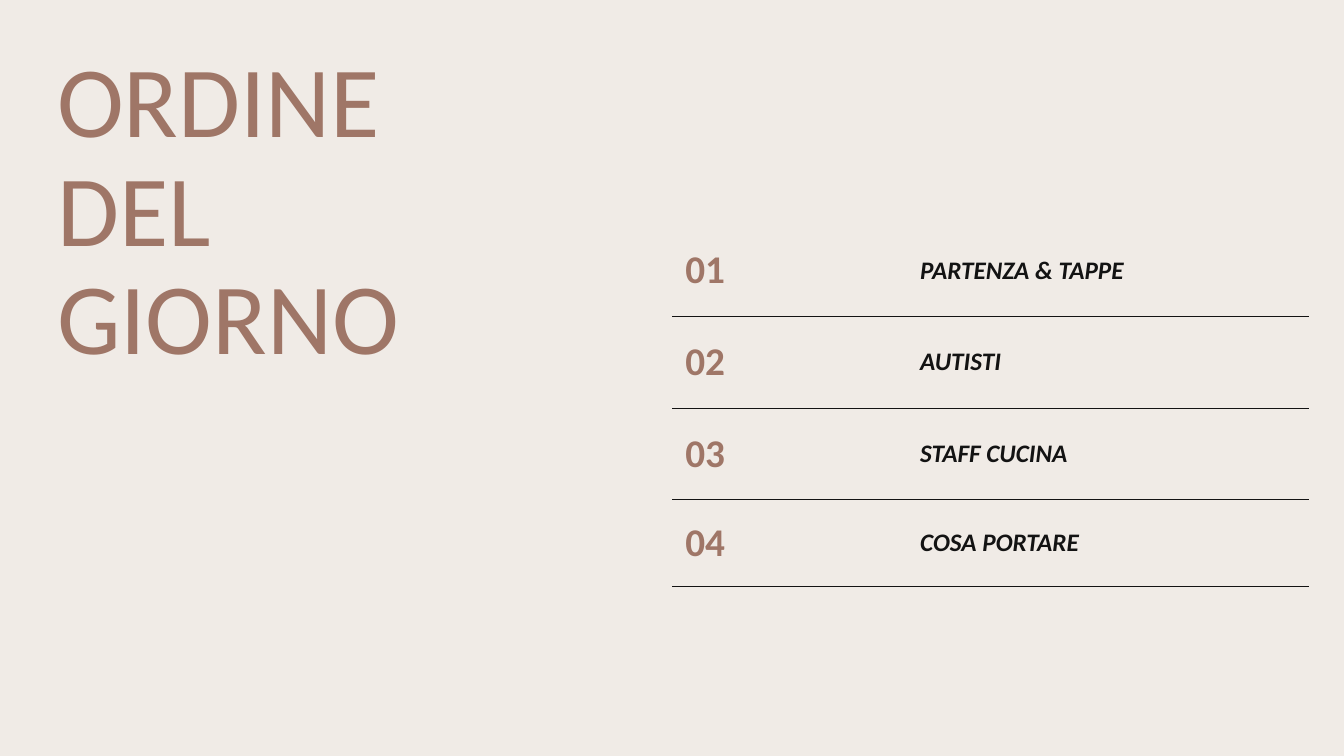
from pptx import Presentation
from pptx.dml.color import RGBColor
from pptx.enum.text import MSO_ANCHOR as Anchor
from pptx.oxml import parse_xml
from pptx.oxml.ns import nsdecls
from pptx.util import Cm, Pt

SAND = RGBColor(0xF0, 0xEB, 0xE6)
CLAY = RGBColor(0x9F, 0x76, 0x67)
INK = RGBColor(0x13, 0x13, 0x13)
FONT = "Calibri"
NO_STYLE = "{2D5ABB26-0587-4C30-8999-92F81FD0307C}"

TITLE_LINES = ["ORDINE", "DEL", "GIORNO"]
AGENDA = ["PARTENZA & TAPPE", "AUTISTI", "STAFF CUCINA", "COSA PORTARE"]
ROW_HEIGHTS = [2.31, 2.31, 2.31, 2.19]
COLUMN_WIDTHS = [5.92, 10.13]


def add_span(para, text, size, color, bold=False, italic=False):
    span = para.add_run()
    span.text = text
    font = span.font
    font.name, font.size, font.bold, font.italic = FONT, Pt(size), bold, italic
    font.color.rgb = color


def rule_below(cell):
    """Draw a thin line along the bottom edge of a table cell."""
    line = parse_xml(
        f'<a:lnB {nsdecls("a")} w="{Pt(0.5)}"><a:solidFill>'
        f'<a:srgbClr val="{INK}"/></a:solidFill></a:lnB>'
    )
    cell._tc.get_or_add_tcPr().insert(0, line)


deck = Presentation()
deck.slide_width, deck.slide_height = Cm(33.87), Cm(19.05)
page = deck.slides.add_slide(deck.slide_layouts[6])
page.background.fill.solid()
page.background.fill.fore_color.rgb = SAND

# Title
title_box = page.shapes.add_textbox(Cm(1.19), Cm(1.14), Cm(30.68), Cm(5.08))
title_box.text_frame.word_wrap = True
title = title_box.text_frame.paragraphs[0]
title.line_spacing = 0.9
for index, words in enumerate(TITLE_LINES):
    if index:
        title.add_line_break()
    add_span(title, words, 72, CLAY)

# Agenda
frame = page.shapes.add_table(
    len(AGENDA), 2, Cm(16.94), Cm(5.66), Cm(sum(COLUMN_WIDTHS)), Cm(sum(ROW_HEIGHTS))
)
table = frame.table
table.first_row = table.horz_banding = False
table._tbl.tblPr.find("{*}tableStyleId").text = NO_STYLE
for column, width in zip(table.columns, COLUMN_WIDTHS):
    column.width = Cm(width)

for index, (topic, height) in enumerate(zip(AGENDA, ROW_HEIGHTS)):
    row = table.rows[index]
    row.height = Cm(height)
    number_cell, topic_cell = row.cells
    for cell in (number_cell, topic_cell):
        cell.margin_left = cell.margin_right = Cm(0.33)
        cell.margin_top = cell.margin_bottom = Cm(0.33)
        cell.vertical_anchor = Anchor.MIDDLE
        cell.fill.background()
        rule_below(cell)
    add_span(number_cell.text_frame.paragraphs[0], f"{index + 1:02d}", 28, CLAY, bold=True)
    add_span(topic_cell.text_frame.paragraphs[0], topic, 18, INK, bold=True, italic=True)

deck.save("out.pptx")
